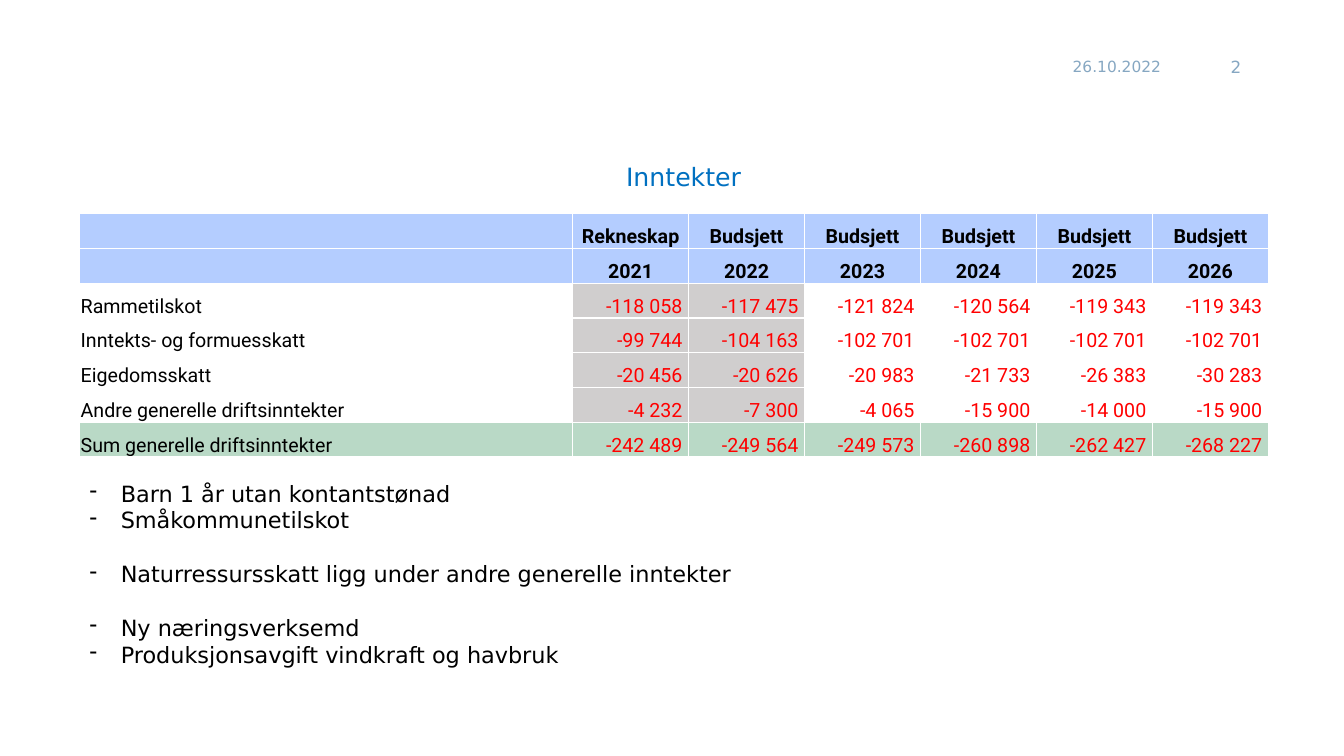
from pptx import Presentation
from pptx.dml.color import RGBColor
from pptx.enum.text import MSO_ANCHOR, MSO_AUTO_SIZE, PP_ALIGN
from pptx.oxml import parse_xml
from pptx.oxml.ns import nsdecls
from pptx.util import Inches, Pt

COLORS = {"muted": "86A7C2", "title": "0070C0", "text": "000000", "amount": "FF0000",
          "header": "B4CDFF", "past": "D0CECE", "total": "B9D9C6", "border": "FFFFFF"}
HEADERS = [
    ["", "Rekneskap"] + ["Budsjett"] * 5,
    ["", "2021", "2022", "2023", "2024", "2025", "2026"],
]
INCOME = [
    ["Rammetilskot", "-118 058", "-117 475", "-121 824", "-120 564", "-119 343", "-119 343"],
    ["Inntekts- og formuesskatt", "-99 744", "-104 163", "-102 701", "-102 701", "-102 701", "-102 701"],
    ["Eigedomsskatt", "-20 456", "-20 626", "-20 983", "-21 733", "-26 383", "-30 283"],
    ["Andre generelle driftsinntekter", "-4 232", "-7 300", "-4 065", "-15 900", "-14 000", "-15 900"],
    ["Sum generelle driftsinntekter", "-242 489", "-249 564", "-249 573", "-260 898", "-262 427", "-268 227"],
]
NOTE_GROUPS = [
    ["Barn 1 år utan kontantstønad", "Småkommunetilskot"],
    ["Naturressursskatt ligg under andre generelle inntekter"],
    ["Ny næringsverksemd", "Produksjonsavgift vindkraft og havbruk"],
]
LABEL_WIDTH, YEAR_WIDTH, ROW_HEIGHT = 4.89, 1.15, 0.345
NOTE_LINE = Pt(19.2)


def style(para, size, color, font="DejaVu Sans", align=PP_ALIGN.LEFT, bold=False):
    para.alignment = align
    para.font.name, para.font.size, para.font.bold = font, Pt(size), bold
    para.font.color.rgb = RGBColor.from_string(COLORS[color])


def add_text(page, area, text, size, color, align=PP_ALIGN.LEFT):
    box = page.shapes.add_textbox(*map(Inches, area))
    frame = box.text_frame
    frame.word_wrap = True
    frame.vertical_anchor = MSO_ANCHOR.MIDDLE
    frame.text = text
    style(frame.paragraphs[0], size, color, align=align)


def add_title(page):
    title = page.shapes.title
    title.left, title.top, title.width, title.height = map(Inches, (2.38, 1.55, 8.8, 0.4))
    frame = title.text_frame
    frame.text = "Inntekter"
    frame.auto_size = MSO_AUTO_SIZE.NONE
    frame.vertical_anchor = MSO_ANCHOR.TOP
    style(frame.paragraphs[0], 18, "title", align=PP_ALIGN.CENTER)


def cell_fill(row, column):
    if row < len(HEADERS):
        return "header"
    if row == len(HEADERS) + len(INCOME) - 1:
        return "total"
    return "past" if column in (1, 2) else None


def format_cell(cell, row, column, text):
    cell.margin_left = cell.margin_top = Inches(0.01)
    cell.margin_right, cell.margin_bottom = Inches(0.01), 0
    cell.vertical_anchor = MSO_ANCHOR.BOTTOM
    cell.text = text
    para = cell.text_frame.paragraphs[0]
    if row < len(HEADERS):
        style(para, 14, "text", "Roboto", PP_ALIGN.CENTER, True)
    elif column:
        cell.margin_right = Inches(0.06)
        style(para, 14, "amount", "Roboto", PP_ALIGN.RIGHT)
    else:
        style(para, 14, "text", "Roboto")
    properties = cell._tc.get_or_add_tcPr()
    for side in ("lnL", "lnR", "lnT", "lnB"):
        properties.append(parse_xml(
            f'<a:{side} {nsdecls("a")} w="12700"><a:solidFill>'
            f'<a:srgbClr val="{COLORS["border"]}"/></a:solidFill></a:{side}>'))
    fill = cell_fill(row, column)
    if fill:
        cell.fill.solid()
        cell.fill.fore_color.rgb = RGBColor.from_string(COLORS[fill])
    else:
        cell.fill.background()


def add_income_table(page):
    rows = HEADERS + INCOME
    widths = [LABEL_WIDTH] + [YEAR_WIDTH] * (len(rows[0]) - 1)
    table = page.shapes.add_table(len(rows), len(widths), Inches(0.79), Inches(2.12),
                                  Inches(sum(widths)), Inches(ROW_HEIGHT * len(rows))).table
    table.first_row = table.horz_banding = False
    for column, width in enumerate(widths):
        table.columns[column].width = Inches(width)
    for row, values in enumerate(rows):
        table.rows[row].height = Inches(ROW_HEIGHT)
        for column, text in enumerate(values):
            format_cell(table.cell(row, column), row, column, text)


def add_notes(page):
    frame = page.shapes.add_textbox(*map(Inches, (0.79, 4.71, 11.54, 2.22))).text_frame
    frame.word_wrap = True
    notes = [(text, group > 0 and place == 0)
             for group, texts in enumerate(NOTE_GROUPS) for place, text in enumerate(texts)]
    for index, (text, starts_group) in enumerate(notes):
        para = frame.add_paragraph() if index else frame.paragraphs[0]
        para.text = text
        para.line_spacing = NOTE_LINE
        if starts_group:
            para.space_before = NOTE_LINE
        properties = para._p.get_or_add_pPr()
        properties.set("marL", str(Inches(0.31)))
        properties.set("indent", str(Inches(-0.31)))
        properties.append(parse_xml(f'<a:buChar {nsdecls("a")} char="-"/>'))
        style(para, 16, "text")


def main():
    deck = Presentation()
    deck.slide_width, deck.slide_height = Inches(13.33), Inches(7.5)
    page = deck.slides.add_slide(deck.slide_layouts[5])
    add_text(page, (10.54, 0.46, 1.15, 0.4), "26.10.2022", 11, "muted")
    add_text(page, (11.84, 0.46, 0.57, 0.4), "2", 12, "muted", PP_ALIGN.RIGHT)
    add_title(page)
    add_income_table(page)
    add_notes(page)
    deck.save("out.pptx")


if __name__ == "__main__":
    main()
